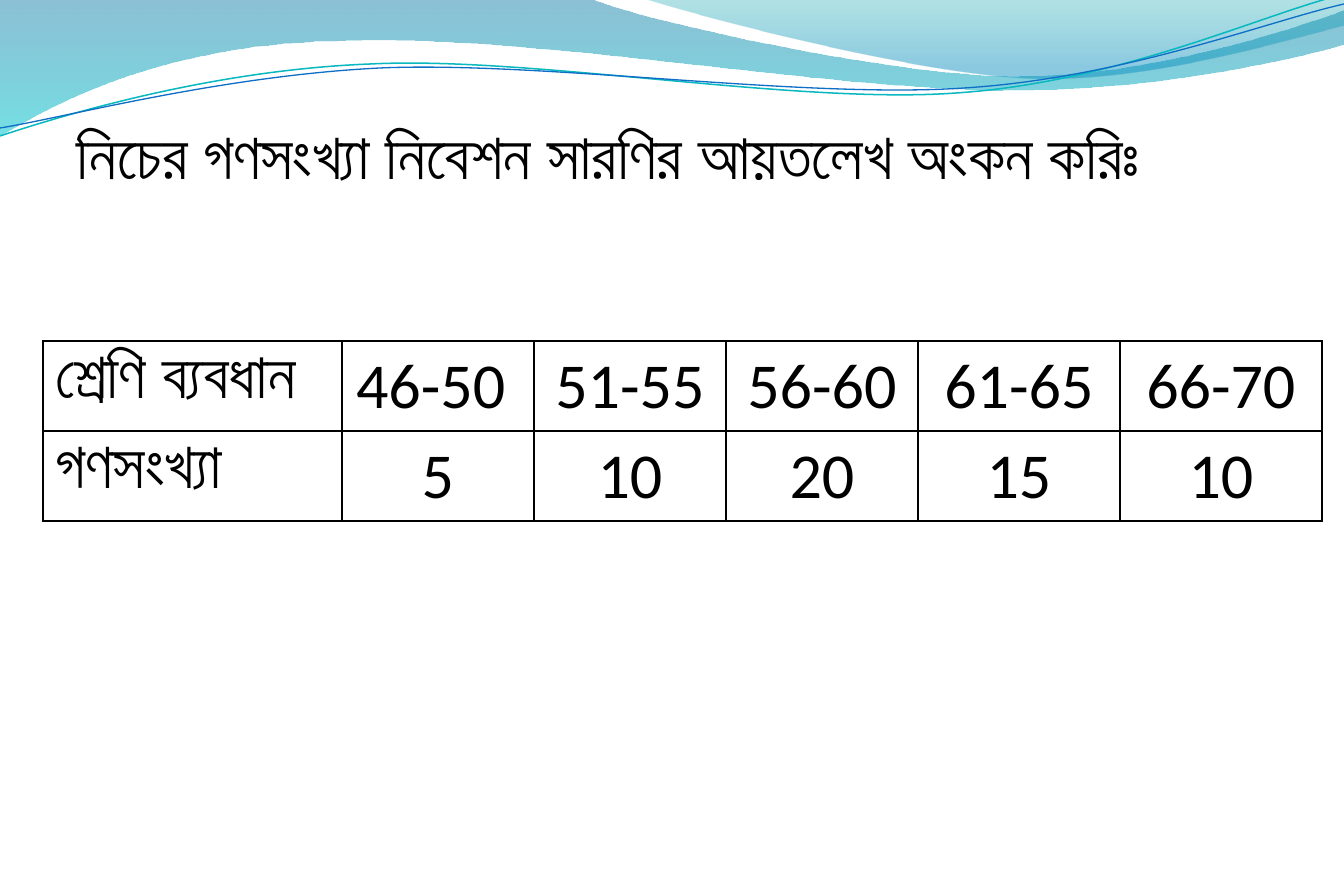
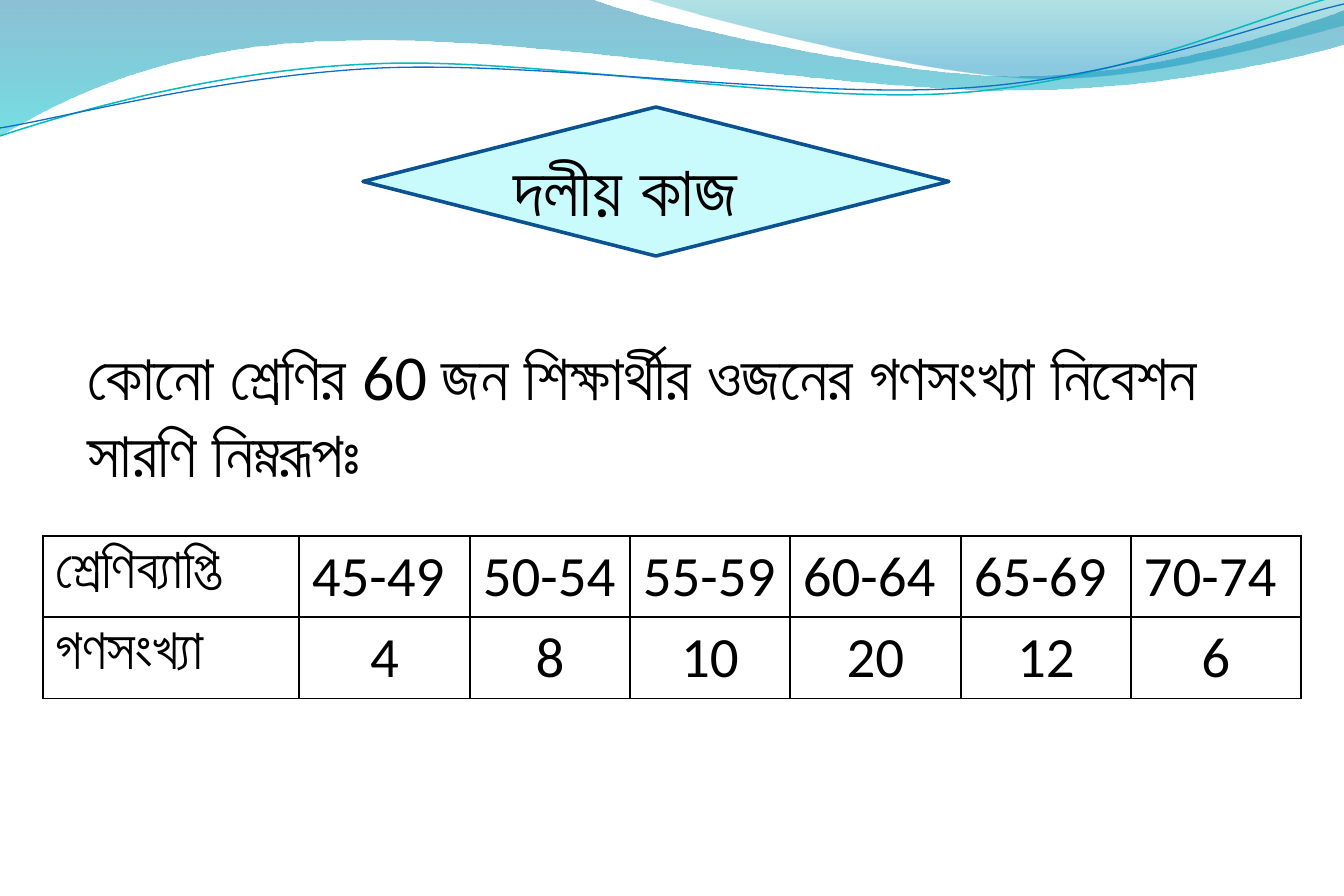
from pptx import Presentation
from pptx.dml.color import RGBColor
from pptx.enum.shapes import MSO_SHAPE
from pptx.enum.text import MSO_AUTO_SIZE, PP_ALIGN
from pptx.oxml import parse_xml
from pptx.oxml.ns import nsdecls, qn
from pptx.util import Pt

DIAMOND = MSO_SHAPE.DIAMOND
FIT_SHAPE = MSO_AUTO_SIZE.SHAPE_TO_FIT_TEXT
LEFT, CENTER = PP_ALIGN.LEFT, PP_ALIGN.CENTER

SCALE = 914400 / 128  # EMU in one px
WIDTH, HEIGHT = 1344, 896
BENGALI, LATIN = "Arial", "Calibri"
COLORS = {
    "text": "000000",
    "border": "000000",
    "wave_blue": "0074A1",
    "wave_cyan": "00C6CF",
    "crest_teal": "00A1A9",
    "crest_blue": "008BBF",
    "line_teal": "0AB8BF",
    "line_blue": "0F6FC6",
    "diamond": "C9FAFC",
    "diamond_edge": "0B5292",
}

# Curves: a start point, then line ends (x, y) or Bezier triples (x1, y1, x2, y2, x, y).
# Gradient stops: colour, position, opacity in percent.
WAVES = [
    ([(0, 0), (591, -1), (639, 20, 892, 76, 1019, 76),
      (1147, 76, 1288, 31, 1344, 10), (1345, 44),
      (1321, 52, 1169, 91, 1002, 90), (836, 90, 513, 33, 346, 41),
      (172, 42, 61, 99, -1, 136)],
     [("wave_blue", 0, 45), ("wave_cyan", 1, 55)]),
    ([(644, -1), (685, 13, 916, 74, 1033, 78),
      (1149, 82, 1293, 38, 1344, 26), (1344, 0)],
     [("crest_teal", 0, 30), ("crest_blue", 0.8, 45)]),
]
WAVE_LINES = [
    ([(0, 136), (64, 115, 212, 70, 371, 64), (531, 56, 796, 105, 957, 93),
      (1119, 82, 1261, 15, 1341, -5)], "line_teal", 0.85),
    ([(0, 128), (63, 118, 220, 76, 380, 68), (541, 61, 803, 99, 964, 88),
      (1124, 78, 1265, 22, 1344, 4)], "line_blue", 0.75),
]


def px(value):
    return round(value * SCALE)


def rgb(name):
    return RGBColor.from_string(COLORS[name])


def add_curve(s, segments, close):
    """Draw a freeform through all points, then bend each triple into a Bezier."""
    points = [(px(seg[i]), px(seg[i + 1]))
              for seg in segments for i in range(0, len(seg), 2)]
    builder = s.shapes.build_freeform(*points[0])
    builder.add_line_segments(points[1:], close=close)
    sp = builder.convert_to_shape()
    sp.shadow.inherit = False
    lines = iter(list(sp._element.iter(qn("a:lnTo"))))
    for seg in segments[1:]:
        first = next(lines)
        if len(seg) == 6:
            bezier = parse_xml(f'<a:cubicBezTo {nsdecls("a")}/>')
            first.addprevious(bezier)
            for line in (first, next(lines), next(lines)):
                bezier.append(line[0])
                line.getparent().remove(line)
    return sp


def add_master_waves(prs, s):
    shapes = []
    # Translucent bands
    for segments, stops in WAVES:
        sp = add_curve(s, segments, True)
        sp.line.fill.background()
        sp.fill.gradient()
        sp.fill.gradient_angle = 270
        for stop, (color, position, _) in zip(sp.fill.gradient_stops, stops):
            stop.color.rgb = rgb(color)
            stop.position = position
        colors = list(sp._element.spPr.iter(qn("a:srgbClr")))
        for clr, (_, _, opacity) in zip(colors, stops):
            clr.append(parse_xml(f'<a:alpha {nsdecls("a")} val="{opacity * 1000}"/>'))
        shapes.append(sp)
    # Thin lines
    for segments, color, width in WAVE_LINES:
        sp = add_curve(s, segments, False)
        sp.fill.background()
        sp.line.color.rgb = rgb(color)
        sp.line.width = Pt(width)
        shapes.append(sp)
    # Shared by every slide through the master
    tree = prs.slide_master.shapes._spTree
    for i, sp in enumerate(shapes):
        sp._element.nvSpPr.cNvPr.set("id", str(100 + i))
        tree.insert(2 + i, sp._element)


def format_run(r, font, size):
    r.font.name = font
    r.font.size = Pt(size)
    r.font.color.rgb = rgb("text")


def add_text(s, box, parts, size):
    tf = s.shapes.add_textbox(*map(px, box)).text_frame
    tf.word_wrap = True
    tf.auto_size = FIT_SHAPE
    for text, font in parts:
        r = tf.paragraphs[0].add_run()
        r.text = text
        format_run(r, font, size)


def set_borders(cell):
    tc_pr = cell._tc.get_or_add_tcPr()
    for side in ("lnL", "lnR", "lnT", "lnB"):
        tc_pr.append(parse_xml(
            f'<a:{side} {nsdecls("a")} w="12700"><a:solidFill>'
            f'<a:srgbClr val="{COLORS["border"]}"/></a:solidFill></a:{side}>'))


def add_frequency_table(s, left, top, widths, row_height, rows, size, header_align):
    table = s.shapes.add_table(
        len(rows), len(widths), px(left), px(top),
        px(sum(widths)), px(row_height * len(rows))).table
    table.first_row = table.horz_banding = False
    for col, width in zip(table.columns, widths):
        col.width = px(width)
    for i, values in enumerate(rows):
        table.rows[i].height = px(row_height)
        for j, value in enumerate(values):
            cell = table.cell(i, j)
            set_borders(cell)
            cell.fill.background()
            p = cell.text_frame.paragraphs[0]
            p.text = value
            p.alignment = LEFT if j == 0 else header_align if i == 0 else CENTER
            format_run(p.runs[0], LATIN if j else BENGALI, size)


def add_diamond_title(s, left, top, width, height, text):
    sp = s.shapes.add_shape(DIAMOND, *map(px, (left, top, width, height)))
    sp.shadow.inherit = False
    sp.fill.solid()
    sp.fill.fore_color.rgb = rgb("diamond")
    sp.line.color.rgb = rgb("diamond_edge")
    sp.line.width = Pt(2)
    add_text(s, (left + 138, top + 32, 374, 99), [(text, BENGALI)], 40)


def histogram_slide(s):
    add_text(s, (64, 109, 1248, 168),
             [("নিচের গণসংখ্যা নিবেশন সারণির আয়তলেখ অংকন করিঃ", BENGALI)], 36)
    add_frequency_table(
        s, 43, 341, [299, 192, 192, 192, 202, 202], 90,
        [["শ্রেণি ব্যবধান", "46-50 ", "51-55", "56-60", "61-65", "66-70"],
         ["গণসংখ্যা", "5", "10", "20", "15", "10"]], 36, CENTER)


def group_work_slide(s):
    add_diamond_title(s, 363, 107, 586, 149, "দলীয় কাজ")
    add_text(s, (75, 330, 1227, 168),
             [("কোনো শ্রেণির ", BENGALI), ("60 ", LATIN),
              ("জন শিক্ষার্থীর ওজনের গণসংখ্যা নিবেশন সারণি নিম্নরূপঃ", BENGALI)], 36)
    add_frequency_table(
        s, 43, 536, [256, 171, 160, 160, 171, 170, 170], 81,
        [["শ্রেণিব্যাপ্তি", "45-49", "50-54", "55-59", "60-64", "65-69", "70-74"],
         ["গণসংখ্যা", "4", "8", "10", "20", "12", "6"]], 32, LEFT)


def main():
    prs = Presentation()
    prs.slide_width, prs.slide_height = px(WIDTH), px(HEIGHT)
    blank = prs.slide_layouts[6]
    slides = [prs.slides.add_slide(blank) for _ in range(2)]
    add_master_waves(prs, slides[0])
    histogram_slide(slides[0])
    group_work_slide(slides[1])
    prs.save("out.pptx")


if __name__ == "__main__":
    main()
